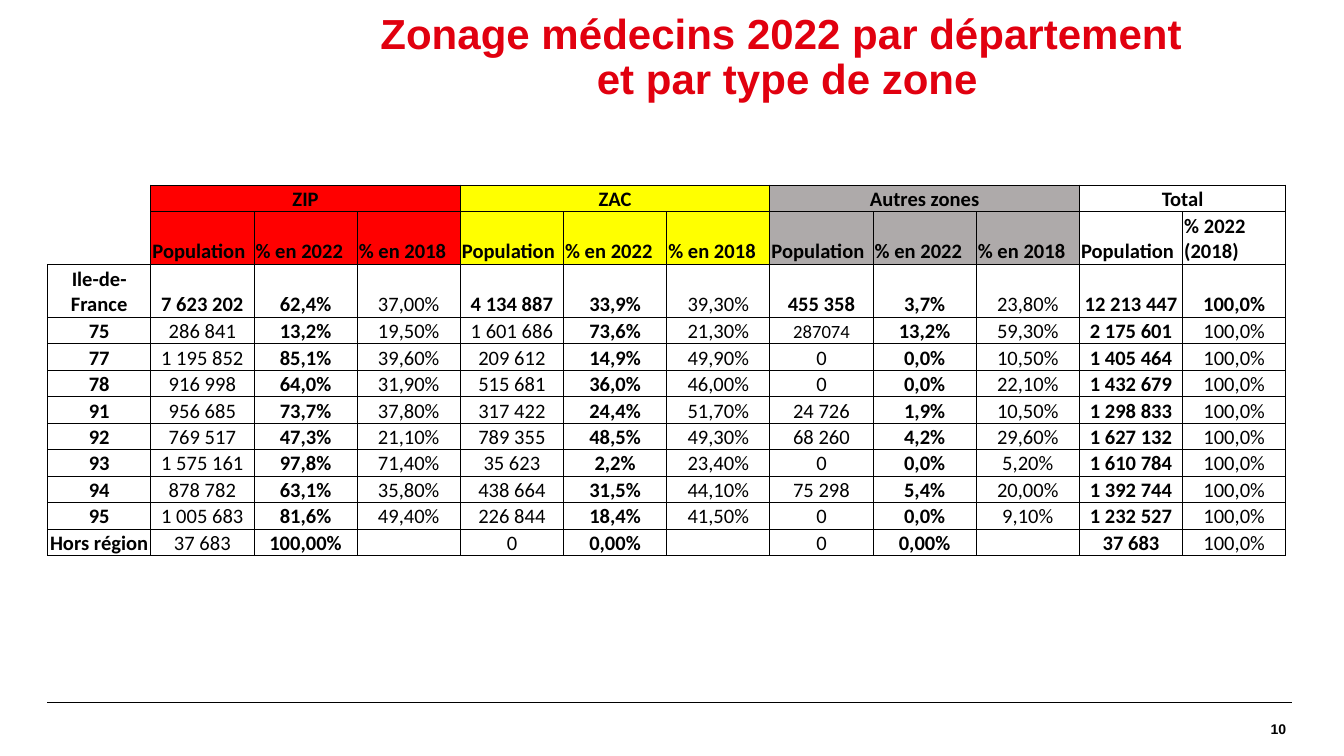
"""Build the slide on the 2022 zoning of doctors by department and type of zone."""
from dataclasses import dataclass

from lxml import etree
from pptx import Presentation
from pptx.dml.color import RGBColor
from pptx.enum.shapes import MSO_CONNECTOR
from pptx.enum.text import MSO_ANCHOR, PP_ALIGN
from pptx.oxml.ns import qn
from pptx.util import Cm, Pt

STRAIGHT = MSO_CONNECTOR.STRAIGHT
MIDDLE, BOTTOM = MSO_ANCHOR.MIDDLE, MSO_ANCHOR.BOTTOM
LEFT, CENTER, RIGHT = PP_ALIGN.LEFT, PP_ALIGN.CENTER, PP_ALIGN.RIGHT


@dataclass(frozen=True)
class Theme:
    ink: str = "000000"
    title: str = "E1000F"
    zip_zone: str = "FF0000"
    zac_zone: str = "FFFF00"
    other_zone: str = "AEAAAA"
    title_font: str = "Arial"
    table_font: str = "Calibri"
    title_size: float = 22.5
    table_size: float = 11
    small_table_size: float = 10
    number_size: float = 7.5
    rule_width: float = 0.8
    border_width: float = 0.5


THEME = Theme()

ZONES = [
    ("ZIP", 3, THEME.zip_zone),
    ("ZAC", 3, THEME.zac_zone),
    ("Autres zones", 3, THEME.other_zone),
    ("Total", 2, None),
]
MEASURES = ["Population", "% en 2022", "% en 2018"] * 3 + ["Population", "% 2022 (2018)"]
FIGURES = """
Ile-de-France|7 623 202|62,4%|37,00%|4 134 887|33,9%|39,30%|455 358|3,7%|23,80%|12 213 447|100,0%
75|286 841|13,2%|19,50%|1 601 686|73,6%|21,30%|287074|13,2%|59,30%|2 175 601|100,0%
77|1 195 852|85,1%|39,60%|209 612|14,9%|49,90%|0|0,0%|10,50%|1 405 464|100,0%
78|916 998|64,0%|31,90%|515 681|36,0%|46,00%|0|0,0%|22,10%|1 432 679|100,0%
91|956 685|73,7%|37,80%|317 422|24,4%|51,70%|24 726|1,9%|10,50%|1 298 833|100,0%
92|769 517|47,3%|21,10%|789 355|48,5%|49,30%|68 260|4,2%|29,60%|1 627 132|100,0%
93|1 575 161|97,8%|71,40%|35 623|2,2%|23,40%|0|0,0%|5,20%|1 610 784|100,0%
94|878 782|63,1%|35,80%|438 664|31,5%|44,10%|75 298|5,4%|20,00%|1 392 744|100,0%
95|1 005 683|81,6%|49,40%|226 844|18,4%|41,50%|0|0,0%|9,10%|1 232 527|100,0%
Hors région|37 683|100,00%||0|0,00%||0|0,00%||37 683|100,0%
"""
REGION_ROW = 2
SMALL_CELL = (3, 7)
LAST_YEAR_COLUMNS = (3, 6, 9)
BOLD_COLUMNS = (0, 2, 5, 8, 10)


def write_text(frame, text, *, font, size, color=THEME.ink, bold=True, align=CENTER, spacing=None):
    paragraph = frame.paragraphs[0]
    paragraph.text = text
    paragraph.alignment = align
    paragraph.line_spacing = spacing
    for run in paragraph.runs:
        run.font.name = font
        run.font.size = Pt(size)
        run.font.bold = bold
        run.font.color.rgb = RGBColor.from_string(color)
    paragraph._p.get_or_add_endParaRPr().set("sz", str(Pt(size).centipoints))


def is_bold(row, column):
    if row < REGION_ROW or column in BOLD_COLUMNS:
        return True
    return row == REGION_ROW and column not in LAST_YEAR_COLUMNS


class SlideBuilder:
    def __init__(self, slide, theme):
        self.slide = slide
        self.theme = theme

    def add_text(self, text, left, top, width, height, margin=None, **text_format):
        frame = self.slide.shapes.add_textbox(Cm(left), Cm(top), Cm(width), Cm(height)).text_frame
        frame.word_wrap = True
        frame.vertical_anchor = MIDDLE
        if margin is not None:
            frame.margin_left = frame.margin_right = Cm(margin)
            frame.margin_top = frame.margin_bottom = Cm(margin)
        write_text(frame, text, font=self.theme.title_font, **text_format)

    def add_rule(self, left, top, width):
        rule = self.slide.shapes.add_connector(
            STRAIGHT, Cm(left), Cm(top), Cm(left + width), Cm(top))
        rule.line.color.rgb = RGBColor.from_string(self.theme.ink)
        rule.line.width = Pt(self.theme.rule_width)
        etree.SubElement(rule._element.spPr, qn("a:effectLst"))

    def style_cell(self, cell, fill=None, visible_sides="LRTB"):
        cell.margin_left = cell.margin_right = cell.margin_top = Cm(0.03)
        cell.margin_bottom = 0
        cell.vertical_anchor = BOTTOM
        properties = cell._tc.get_or_add_tcPr()
        for side in "LRTB":
            border = etree.SubElement(properties, qn(f"a:ln{side}"))
            border.set("w", str(Pt(self.theme.border_width)))
            if side in visible_sides:
                solid = etree.SubElement(border, qn("a:solidFill"))
                etree.SubElement(solid, qn("a:srgbClr")).set("val", self.theme.ink)
            else:
                etree.SubElement(border, qn("a:noFill"))
        if fill:
            cell.fill.solid()
            cell.fill.fore_color.rgb = RGBColor.from_string(fill)
        else:
            cell.fill.background()

    def add_zone_table(self, left, top, column_width, row_heights):
        names, fills = [""], [None]
        for name, span, color in ZONES:
            names += [name] + [""] * (span - 1)
            fills += [color] * span
        rows = [names, [""] + MEASURES]
        rows += [line.split("|") for line in FIGURES.strip().splitlines()]
        table = self.slide.shapes.add_table(
            len(rows), len(names), Cm(left), Cm(top),
            Cm(column_width * len(names)), Cm(sum(row_heights))).table
        table.first_row = table.horz_banding = False
        for column in table.columns:
            column.width = Cm(column_width)
        for table_row, height in zip(table.rows, row_heights):
            table_row.height = Cm(height)

        for row, values in enumerate(rows):
            for column, value in enumerate(values):
                cell = table.cell(row, column)
                is_header = row < REGION_ROW
                is_corner = is_header and column == 0
                self.style_cell(cell, fills[column] if is_header else None,
                                "RB" if is_corner else "LRTB")
                is_small = (row, column) == SMALL_CELL
                write_text(cell.text_frame, value, font=self.theme.table_font,
                           size=self.theme.small_table_size if is_small else self.theme.table_size,
                           bold=is_bold(row, column), align=LEFT if row == 1 else CENTER)

        table.cell(0, 0).merge(table.cell(1, 0))
        first = 1
        for _, span, _ in ZONES:
            table.cell(0, first).merge(table.cell(0, first + span - 1))
            first += span


def main():
    presentation = Presentation()
    presentation.slide_width, presentation.slide_height = Cm(25.4), Cm(14.29)
    slide = presentation.slides.add_slide(presentation.slide_layouts[6])
    builder = SlideBuilder(slide, THEME)
    for left in (0.89, 0.99):
        builder.add_rule(left, 13.28, 23.42)
    builder.add_text("10", 20.55, 13.28, 3.76, 1, margin=0, size=THEME.number_size, align=RIGHT)
    builder.add_text("Zonage médecins 2022 par département \vet par type de zone",
                     4.37, 0.36, 21.03, 1.5,
                     size=THEME.title_size, color=THEME.title, spacing=0.9)
    builder.add_zone_table(0.9, 3.5, 1.95, [0.5, 1, 1] + [0.5] * 9)
    presentation.save("out.pptx")


if __name__ == "__main__":
    main()
